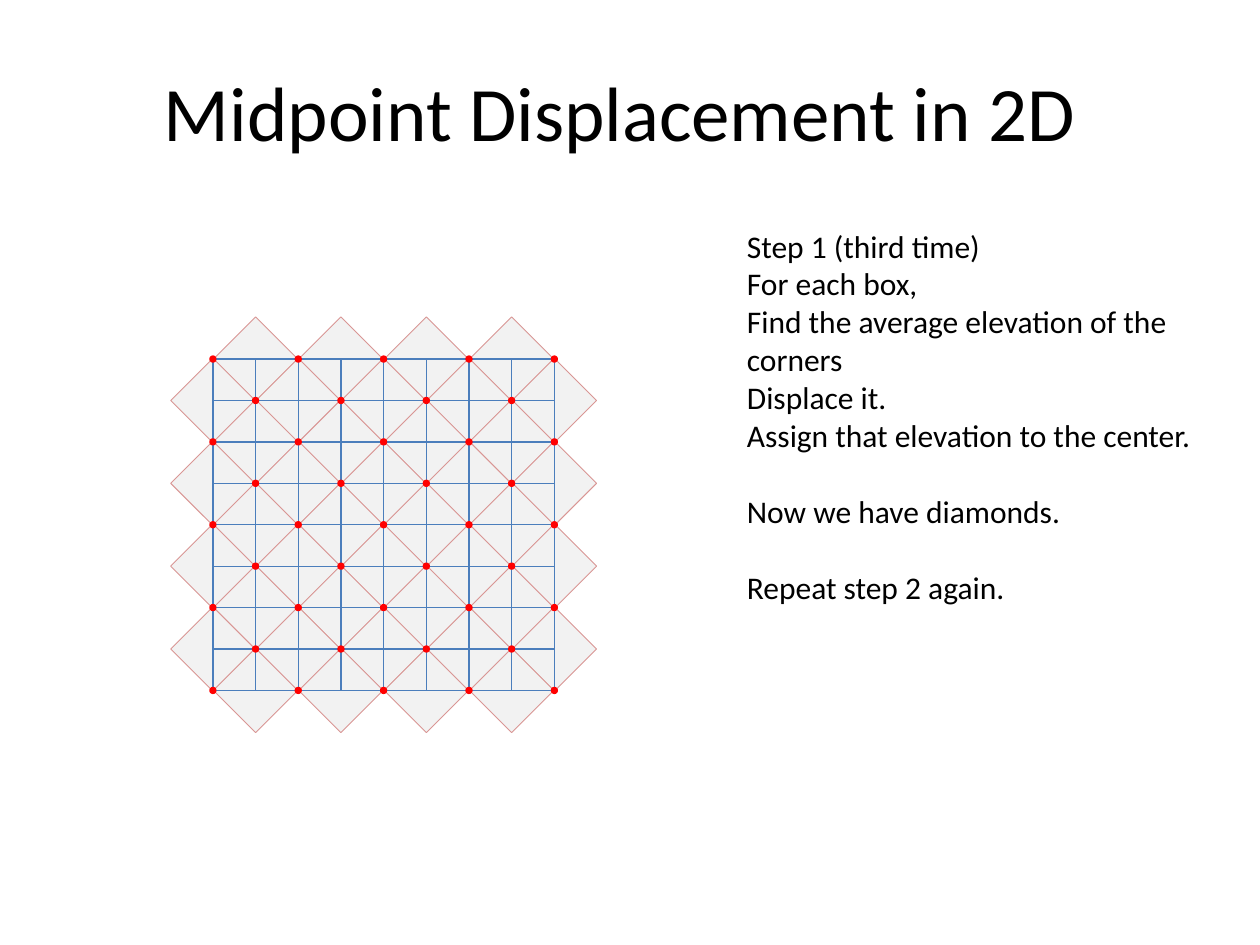
import dataclasses
import itertools

import lxml.etree
import pptx
import pptx.dml.color
import pptx.enum.shapes
import pptx.enum.text
import pptx.oxml.ns
import pptx.util


@dataclasses.dataclass(frozen=True)
class Theme:
    font: str = "Calibri"
    text: str = "000000"
    diamond_fill: str = "F2F2F2"
    diamond_line: str = "D99694"
    grid_line: str = "4B7EBC"
    dot: str = "FF0000"
    title_size: float = 44
    body_size: float = 18
    body_gap: float = 22


@dataclasses.dataclass(frozen=True)
class Lattice:
    """Square of steps by steps cells, measured in inches."""
    left: float
    top: float
    width: float
    height: float
    steps: int

    def x(self, column: int) -> float:
        return self.left + self.width * column / self.steps

    def y(self, row: int) -> float:
        return self.top + self.height * row / self.steps


@dataclasses.dataclass(frozen=True)
class Marker:
    """A shape drawn centred on a lattice point."""
    preset: pptx.enum.shapes.MSO_SHAPE
    size: float
    fill: str
    line: str
    line_width: float


@dataclasses.dataclass(frozen=True)
class Line:
    text: str
    starts_section: bool = False


THEME = Theme()
LATTICE = Lattice(left=1.69, top=2.85, width=2.71, height=2.63, steps=8)
DIAMOND = Marker(pptx.enum.shapes.MSO_SHAPE.DIAMOND, 0.67,
                 THEME.diamond_fill, THEME.diamond_line, 0.5)
DOT = Marker(pptx.enum.shapes.MSO_SHAPE.OVAL, 0.03, THEME.dot, THEME.dot, 2)
STEPS = [
    Line("Step 1 (third time)"),
    Line("For each box,"),
    Line("Find the average elevation of the corners"),
    Line("Displace it."),
    Line("Assign that elevation to the center."),
    Line("Now we have diamonds.", starts_section=True),
    Line("Repeat step 2 again.", starts_section=True),
]


def rgb(value: str) -> pptx.dml.color.RGBColor:
    return pptx.dml.color.RGBColor.from_string(value)


def add_marker(shapes, marker: Marker, column: int, row: int) -> None:
    size = pptx.util.Inches(marker.size)
    shape = shapes.add_shape(
        marker.preset,
        pptx.util.Inches(LATTICE.x(column) - marker.size / 2),
        pptx.util.Inches(LATTICE.y(row) - marker.size / 2),
        size, size)
    shape.shadow.inherit = False
    shape.fill.solid()
    shape.fill.fore_color.rgb = rgb(marker.fill)
    shape.line.color.rgb = rgb(marker.line)
    shape.line.width = pptx.util.Pt(marker.line_width)


def add_grid_line(shapes, start: tuple[int, int], end: tuple[int, int]) -> None:
    """Join two lattice points, each given as (column, row)."""
    ends = [pptx.util.Inches(length) for column, row in (start, end)
            for length in (LATTICE.x(column), LATTICE.y(row))]
    line = shapes.add_connector(pptx.enum.shapes.MSO_CONNECTOR.STRAIGHT, *ends)
    line.line.color.rgb = rgb(THEME.grid_line)
    line.line.width = pptx.util.Pt(0.75)
    lxml.etree.SubElement(line._element.spPr, pptx.oxml.ns.qn("a:effectLst"))


def add_text(slide, lines: list[Line], *, left: float, top: float,
             width: float, height: float, size: float,
             align=pptx.enum.text.PP_ALIGN.LEFT,
             anchor=pptx.enum.text.MSO_ANCHOR.TOP) -> None:
    box = slide.shapes.add_textbox(
        *(pptx.util.Inches(length) for length in (left, top, width, height)))
    frame = box.text_frame
    frame.word_wrap = True
    frame.vertical_anchor = anchor
    for index, line in enumerate(lines):
        para = frame.add_paragraph() if index else frame.paragraphs[0]
        para.alignment = align
        if line.starts_section:
            para.space_before = pptx.util.Pt(THEME.body_gap)
        span = para.add_run()
        span.text = line.text
        span.font.name = THEME.font
        span.font.size = pptx.util.Pt(size)
        span.font.color.rgb = rgb(THEME.text)


def draw_lattice(slide) -> None:
    """Diamonds sit on odd points, dots on box corners and box centres."""
    diamonds = slide.shapes.add_group_shape().shapes
    grid = slide.shapes.add_group_shape().shapes
    last = LATTICE.steps
    for row, column in itertools.product(range(last + 1), repeat=2):
        if (row + column) % 2:
            add_marker(diamonds, DIAMOND, column, row)
        else:
            add_marker(slide.shapes, DOT, column, row)
    for index in range(last + 1):
        add_grid_line(grid, (0, index), (last, index))
        add_grid_line(grid, (index, last), (index, 0))


def main() -> None:
    deck = pptx.Presentation()
    deck.slide_width = pptx.util.Inches(10)
    deck.slide_height = pptx.util.Inches(7.5)
    slide = deck.slides.add_slide(deck.slide_layouts[6])
    draw_lattice(slide)
    add_text(slide, [Line("Midpoint Displacement in 2D")],
             left=0.42, top=0.25, width=9, height=1.25, size=THEME.title_size,
             align=pptx.enum.text.PP_ALIGN.CENTER,
             anchor=pptx.enum.text.MSO_ANCHOR.MIDDLE)
    add_text(slide, STEPS, left=5.83, top=1.75, width=4, height=3.13,
             size=THEME.body_size)
    deck.save("out.pptx")


if __name__ == "__main__":
    main()
